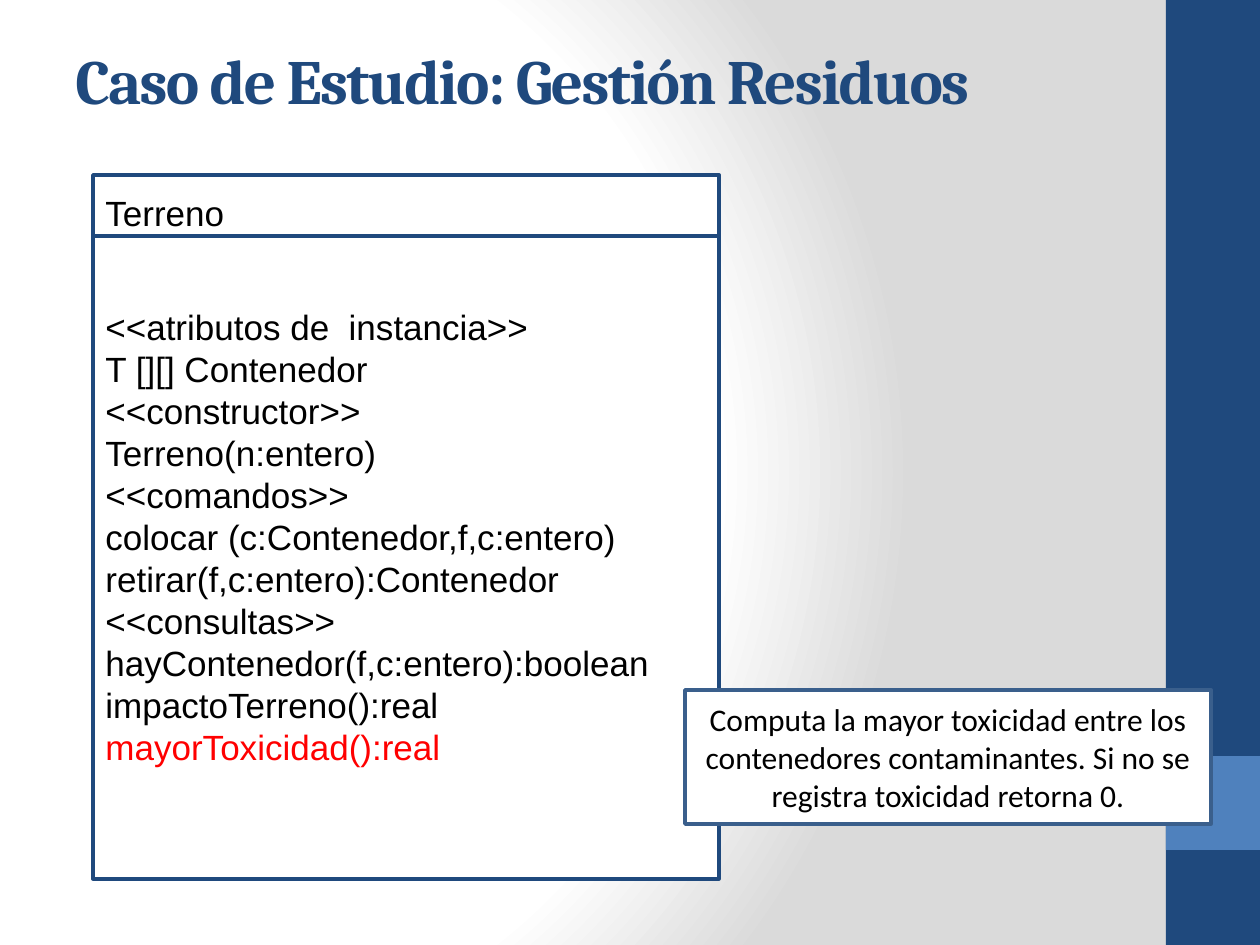
"""Build the class diagram slide for the waste management case study."""
import pptx
import pptx.dml.color
import pptx.enum.shapes
import pptx.enum.text
import pptx.oxml
import pptx.util

COLORS = {"navy": "1F497D", "blue": "4F81BD", "steel": "3A5F8C", "white": "FFFFFF",
          "gray": "DADADA", "black": "000000", "red": "FF0000"}
TITLE = "Caso de Estudio: Gestión Residuos"
CLASS_NAME = "Terreno"
MEMBERS = [
    "<<atributos de  instancia>>",
    "T [][] Contenedor",
    "<<constructor>>",
    "Terreno(n:entero)",
    "<<comandos>>",
    "colocar (c:Contenedor,f,c:entero)",
    "retirar(f,c:entero):Contenedor",
    "<<consultas>>",
    "hayContenedor(f,c:entero):boolean",
    "impactoTerreno():real",
]
HIGHLIGHTED = "mayorToxicidad():real"
NOTE = ("Computa la mayor toxicidad entre los contenedores contaminantes. "
        "Si no se registra toxicidad retorna 0.")

WIDTH, HEIGHT = 1260, 945
SIDEBAR_LEFT, ACCENT_TOP, ACCENT_SIDE = 1166, 756, 94
CLASS_LEFT, CLASS_WIDTH = 93, 626
LINE_HEIGHT, INSET = 42, 6
STOPS = [(0, "white"), (75, "white"), (100, "gray")]
GRADIENT_CENTER = {"l": 20, "t": 50, "r": 100, "b": 50}

CLASS_FONT = {"name": "Arial", "size": pptx.util.Pt(20)}
NOTE_FONT = {"name": "Calibri", "size": pptx.util.Pt(18)}
TITLE_FONT = {"name": "Cambria", "size": pptx.util.Pt(36), "bold": True}
LEFT = pptx.enum.text.PP_ALIGN.LEFT
CENTER = pptx.enum.text.PP_ALIGN.CENTER


def px(length):
    return round(length * 914400 / 126)


def rgb(color):
    return pptx.dml.color.RGBColor.from_string(COLORS[color])


def add_box(slide, bounds, fill, line=None):
    box = slide.shapes.add_shape(pptx.enum.shapes.MSO_SHAPE.RECTANGLE, *map(px, bounds))
    box.shadow.inherit = False
    box.fill.solid()
    box.fill.fore_color.rgb = rgb(fill)
    if line:
        box.line.color.rgb = rgb(line)
        box.line.width = pptx.util.Pt(2)
    else:
        box.line.fill.background()
    return box


def write(box, lines, font, align=LEFT):
    frame = box.text_frame
    frame.word_wrap = True
    frame.vertical_anchor = pptx.enum.text.MSO_ANCHOR.MIDDLE
    for index, (text, color) in enumerate(lines):
        paragraph = frame.add_paragraph() if index else frame.paragraphs[0]
        paragraph.alignment = align
        run = paragraph.add_run()
        run.text = text
        for attribute, value in font.items():
            setattr(run.font, attribute, value)
        run.font.color.rgb = rgb(color)
    return frame


def paint_background(slide):
    fill = slide.background.fill
    fill.gradient()
    stops = "".join(f'<a:gs pos="{position * 1000}"><a:srgbClr val="{COLORS[color]}"/></a:gs>'
                    for position, color in STOPS)
    center = " ".join(f'{side}="{percent * 1000}"' for side, percent in GRADIENT_CENTER.items())
    gradient = pptx.oxml.parse_xml(
        '<a:gradFill xmlns:a="http://schemas.openxmlformats.org/drawingml/2006/main" '
        f'rotWithShape="1"><a:gsLst>{stops}</a:gsLst>'
        f'<a:path path="circle"><a:fillToRect {center}/></a:path></a:gradFill>')
    properties = slide.background._cSld.bg.bgPr
    properties.replace(properties[0], gradient)


def main():
    deck = pptx.Presentation()
    deck.slide_width, deck.slide_height = px(WIDTH), px(HEIGHT)
    slide = deck.slides.add_slide(deck.slide_layouts[6])
    paint_background(slide)

    add_box(slide, (SIDEBAR_LEFT, 0, WIDTH - SIDEBAR_LEFT, HEIGHT), "navy")
    add_box(slide, (SIDEBAR_LEFT, ACCENT_TOP, ACCENT_SIDE, ACCENT_SIDE), "blue")

    title = slide.shapes.add_textbox(*map(px, (63, 0, 1050, 158)))
    heading = write(title, [(TITLE, "navy")], TITLE_FONT)
    heading.paragraphs[0].runs[0].font._element.set("spc", "-100")

    header = add_box(slide, (CLASS_LEFT, 175, CLASS_WIDTH, 74), "white", "navy")
    write(header, [(CLASS_NAME, "black")], CLASS_FONT)

    body = add_box(slide, (CLASS_LEFT, 236, CLASS_WIDTH, 643), "white", "navy")
    members = [(member, "black") for member in MEMBERS] + [(HIGHLIGHTED, "red")]
    write(body, members, CLASS_FONT).margin_bottom = px(INSET + LINE_HEIGHT)

    note = add_box(slide, (685, 690, 526, 134), "white", "steel")
    write(note, [(NOTE, "black")], NOTE_FONT, CENTER)

    deck.save("out.pptx")


if __name__ == "__main__":
    main()
